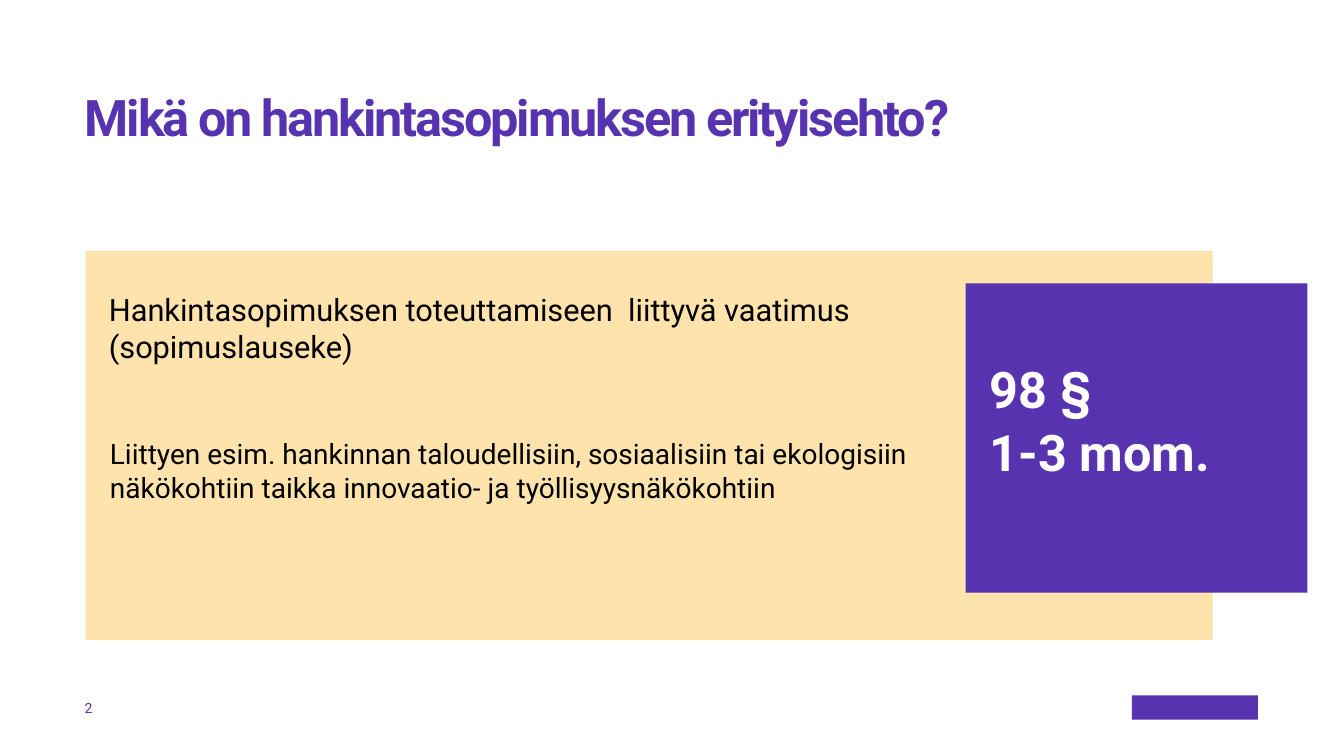
from dataclasses import dataclass

from lxml import etree
from pptx import Presentation
from pptx.dml.color import RGBColor
from pptx.enum.shapes import MSO_SHAPE
from pptx.enum.text import MSO_ANCHOR, MSO_AUTO_SIZE, PP_ALIGN
from pptx.oxml.ns import qn
from pptx.util import Inches, Pt

RECTANGLE = MSO_SHAPE.RECTANGLE
TOP, MIDDLE = MSO_ANCHOR.TOP, MSO_ANCHOR.MIDDLE
LEFT = PP_ALIGN.LEFT
NO_AUTOFIT = MSO_AUTO_SIZE.NONE

WIDTH, HEIGHT = Inches(13.33), Inches(7.5)
COMPARISON_LAYOUT = 4
FONT = "Roboto"
PURPLE, SAND, BLACK, WHITE = "5733AF", "FEE3AC", "000000", "FFFFFF"


@dataclass
class Block:
    """Text block; box and inset are percentages of the slide's size."""
    text: str
    box: tuple[float, float, float, float]
    size: float
    color: str
    fill: str | None = None
    bold: bool = False
    inset: tuple[float, float, float] = (0, 0, 0)
    anchor: MSO_ANCHOR = TOP
    line_spacing: float = 1.0
    tracking: float = 0


TITLE = Block("Mikä on hankintasopimuksen erityisehto?", (6.3, 12.27, 87.45, 14.67),
              36, PURPLE, bold=True, line_spacing=0.9, tracking=-1.5)
BODIES = {
    1: Block("Liittyen esim. hankinnan taloudellisiin, sosiaalisiin tai ekologisiin "
             "näkökohtiin taikka innovaatio- ja työllisyysnäkökohtiin",
             (6.38, 33.2, 83.85, 51.47), 20, BLACK, SAND, inset=(1.8, 24.53, 20.7)),
    2: Block("Hankintasopimuksen toteuttamiseen  liittyvä vaatimus (sopimuslauseke)",
             (8.1, 38.4, 60.23, 11.6), 22, BLACK),
    3: Block("98 §\n1-3 mom.", (71.85, 37.47, 25.43, 40.93), 36, WHITE, PURPLE,
             bold=True, inset=(1.8, 9.87, 1.8)),
}
PAGE_NUMBER = Block("2", (6.3, 92, 3.53, 3.2), 10, PURPLE, anchor=MIDDLE)
LOGO_BOX = (84.22, 92, 9.38, 3.2)


def rgb(color: str) -> RGBColor:
    return RGBColor.from_string(color)


def across(percent: float) -> int:
    return round(WIDTH * percent / 100)


def down(percent: float) -> int:
    return round(HEIGHT * percent / 100)


def place(box: tuple[float, float, float, float]) -> tuple[int, int, int, int]:
    left, top, width, height = box
    return across(left), down(top), across(width), down(height)


def paint(s, color: str) -> None:
    s.fill.solid()
    s.fill.fore_color.rgb = rgb(color)
    s.line.fill.background()


def remove_bullet(p) -> None:
    pPr = p._p.get_or_add_pPr()
    pPr.set("marL", "0")
    pPr.set("indent", "0")
    etree.SubElement(pPr, qn("a:buNone"))


def write(s, block: Block) -> None:
    """Move the shape into place, then fill and format it."""
    s.left, s.top, s.width, s.height = place(block.box)
    if block.fill:
        paint(s, block.fill)
    tf = s.text_frame
    tf.text = block.text
    tf.word_wrap = True
    tf.auto_size = NO_AUTOFIT
    tf.vertical_anchor = block.anchor
    left, top, right = block.inset
    tf.margin_left, tf.margin_right = across(left), across(right)
    tf.margin_top, tf.margin_bottom = down(top), 0
    for i, p in enumerate(tf.paragraphs):
        remove_bullet(p)
        p.alignment = LEFT
        p.line_spacing = block.line_spacing
        p.space_before = Pt(2 if i else 0)
        for r in p.runs:
            r.font.name = FONT
            r.font.size = Pt(block.size)
            r.font.bold = block.bold
            r.font.color.rgb = rgb(block.color)
            if block.tracking:
                r.font._element.set("spc", str(round(block.tracking * 100)))


def main() -> None:
    prs = Presentation()
    prs.slide_width, prs.slide_height = WIDTH, HEIGHT
    slide = prs.slides.add_slide(prs.slide_layouts[COMPARISON_LAYOUT])

    write(slide.shapes.title, TITLE)
    for idx, block in BODIES.items():
        write(slide.placeholders[idx], block)
    unused = slide.placeholders[4].element
    unused.getparent().remove(unused)

    write(slide.shapes.add_textbox(*place(PAGE_NUMBER.box)), PAGE_NUMBER)
    logo = slide.shapes.add_shape(RECTANGLE, *place(LOGO_BOX))
    logo.shadow.inherit = False
    paint(logo, PURPLE)
    prs.save("out.pptx")


if __name__ == "__main__":
    main()
